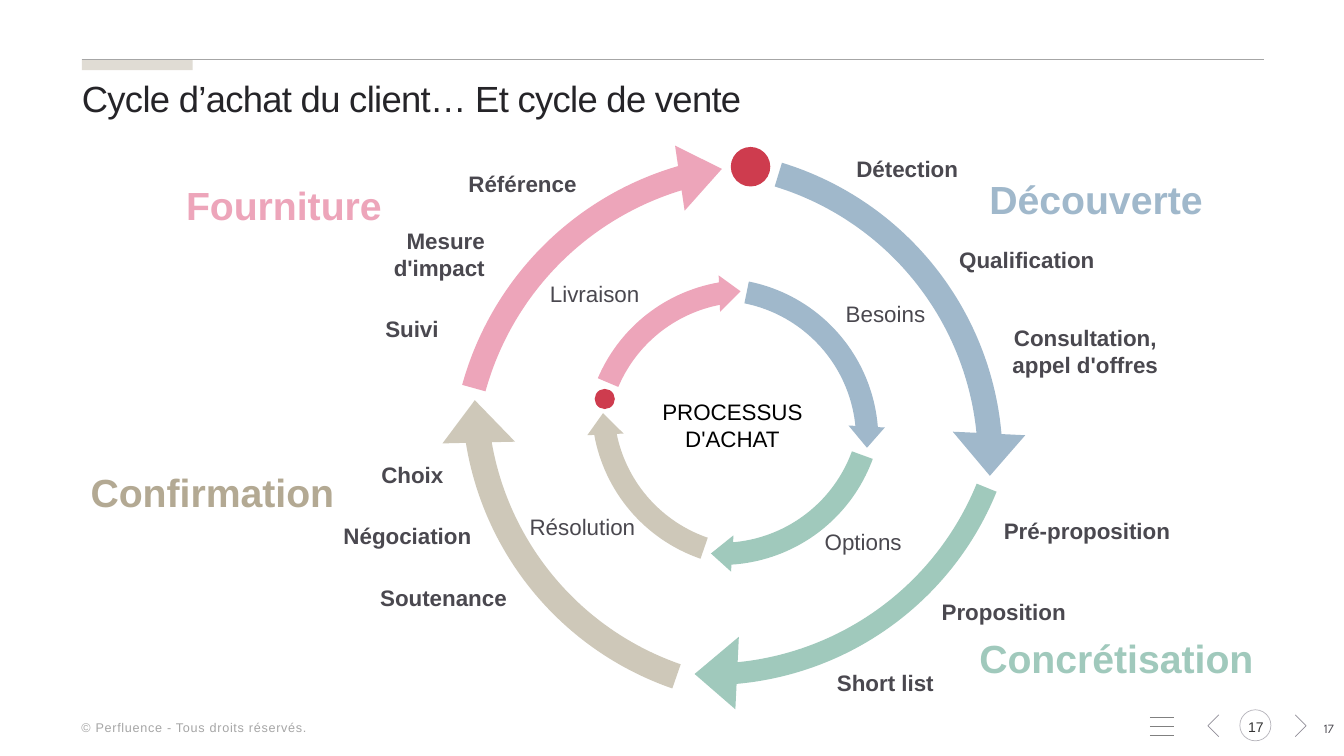
from lxml.etree import SubElement
from pptx import Presentation
from pptx.dml.color import RGBColor
from pptx.enum.shapes import MSO_CONNECTOR as Link, MSO_SHAPE as Shape
from pptx.enum.text import MSO_ANCHOR as Anchor, PP_ALIGN as Align
from pptx.oxml.ns import qn
from pptx.util import Inches, Pt

COLUMNS, ROWS = 160, 90
BLUE = RGBColor(0xA0, 0xB8, 0xCB)
GREEN = RGBColor(0xA0, 0xC9, 0xBC)
SAND = RGBColor(0xCE, 0xC8, 0xB9)
DARK_SAND = RGBColor(0xB3, 0xA9, 0x93)
PINK = RGBColor(0xED, 0xA5, 0xBA)
RED = RGBColor(0xCE, 0x3C, 0x4E)
TAB = RGBColor(0xE0, 0xDC, 0xD4)
INK = RGBColor(0x25, 0x24, 0x28)
BODY = RGBColor(0x4A, 0x48, 0x4F)
BLACK = RGBColor(0, 0, 0)
NUMBER = RGBColor(0x33, 0x33, 0x33)
RULE = RGBColor(0xA6, 0xA6, 0xA6)
MENU = RGBColor(0x80, 0x80, 0x80)
CHEVRON = RGBColor(0x91, 0x8E, 0x98)
RING = RGBColor(0xB6, 0xB4, 0xBB)

STEPS = [
    ("Détection", 100.7, 17.9, 14.6),
    ("Qualification", 112.9, 28.7, 18.7),
    ("Pré-proposition", 118.2, 61, 22.4),
    ("Proposition", 110.8, 70.6, 17.4),
    ("Short list", 98.4, 79.1, 14),
    ("Soutenance", 44, 69, 17.6),
    ("Négociation", 39.6, 61.6, 17.8),
    ("Choix", 44.2, 54.3, 9.8),
    ("Suivi", 44.6, 36.9, 8.9),
    ("Référence", 54.5, 19.7, 15.4),
]
BUYING_STAGES = [
    ("Besoins", 99.5, 35.1, 17.5, Align.LEFT),
    ("Options", 97, 62.3, 17.2, Align.LEFT),
    ("Résolution", 54.6, 60.5, 22.2, Align.RIGHT),
    ("Livraison", 58, 32.8, 19.3, Align.RIGHT),
]
PHASES = [
    ("Découverte", 116.6, 20.3, 28.1, BLUE, Align.LEFT),
    ("Concrétisation", 115.4, 74.9, 35.4, GREEN, Align.LEFT),
    ("Confirmation", 9.6, 55.1, 33.8, DARK_SAND, Align.LEFT),
    ("Fourniture", 16.8, 21, 34, PINK, Align.CENTER),
]
INNER_CYCLE = [
    (65.3, 32.3, 55.7, BLUE, 66, 8.11, 299.27, 225.69, 54),
    (65.8, 28, 146.5, GREEN, 66, 8.14, 299.27, 233.54, 54),
    (69.6, 28.3, 229.9, SAND, 66, 8.14, 299.27, 239.1, 54),
    (68.8, 32.5, 320.4, PINK, 66, 8.14, 299.27, 242.66, 54),
]
OUTER_CYCLE = [
    (42.2, 14.9, 55.7, BLUE, 37, 8.11, 299, 231.34, 54),
    (44.4, 4.6, 146.5, GREEN, 32, 8.14, 298.12, 235.66, 54),
    (52.2, 6.8, 231.7, SAND, 38, 8.14, 298.81, 237.37, 54),
    (51.2, 15.8, 315.2, PINK, 36, 8.14, 298.28, 240.23, 49),
]


def write(frame, text, size=16, color=BODY, bold=False, align=Align.LEFT,
          font="Arial", tracking=0, leading=None):
    for index, line in enumerate(text.split("\n")):
        paragraph = frame.add_paragraph() if index else frame.paragraphs[0]
        paragraph.alignment = align
        paragraph.line_spacing = leading
        run = paragraph.add_run()
        run.text = line
        run.font.name, run.font.size = font, Pt(size)
        run.font.bold, run.font.color.rgb = bold, color
        if tracking:
            run.font._element.set("spc", str(int(tracking * 100)))


class Board:
    def __init__(self, deck):
        self.shapes = deck.slides.add_slide(deck.slide_layouts[6]).shapes
        self.column = deck.slide_width / COLUMNS
        self.row = deck.slide_height / ROWS
        self.hairline = Pt(0.5)

    def place(self, x, y):
        return round(x * self.column), round(y * self.row)

    def text(self, text, left, top, width, height=4.4, wrap=True,
             anchor=Anchor.TOP, margin=True, **style):
        box = self.shapes.add_textbox(*self.place(left, top), *self.place(width, height))
        frame = box.text_frame
        frame.word_wrap, frame.vertical_anchor = wrap, anchor
        if not margin:
            frame.margin_left = frame.margin_right = 0
            frame.margin_top = frame.margin_bottom = 0
        write(frame, text, **style)

    def shape(self, kind, left, top, width, height, fill=None, line=None):
        figure = self.shapes.add_shape(kind, *self.place(left, top), *self.place(width, height))
        self.paint(figure, fill, line)
        return figure

    def paint(self, figure, fill, line):
        figure.shadow.inherit = False
        if fill is None:
            figure.fill.background()
        else:
            figure.fill.solid()
            figure.fill.fore_color.rgb = fill
        if line is None:
            figure.line.fill.background()
        else:
            figure.line.color.rgb = line
            figure.line.width = self.hairline

    def arc(self, extent, left, top, turn, fill, band, tip, end, start, head):
        arrow = self.shape(Shape.CIRCULAR_ARROW, left, top, extent, extent, fill)
        arrow.rotation = turn
        settings = (band / 1000, tip * 0.6, end * 0.6, start * 0.6, head / 1000)
        for index, value in enumerate(settings):
            arrow.adjustments[index] = value

    def rule(self, left, right, y, color):
        line = self.shapes.add_connector(
            Link.STRAIGHT, *self.place(left, y), *self.place(right, y))
        line.line.color.rgb, line.line.width = color, self.hairline
        SubElement(line._element.spPr, qn("a:effectLst"))

    def chevron(self, back, tip):
        outline = self.shapes.build_freeform(*self.place(back, 85.1))
        outline.add_line_segments(
            [self.place(tip, 86.4), self.place(back, 87.7)], close=False)
        self.paint(outline.convert_to_shape(), None, CHEVRON)


def draw_frame(board):
    board.chevron(145.1, 143.8)
    board.chevron(154.2, 155.5)
    board.shape(Shape.OVAL, 147.6, 84.5, 3.7, 3.7, line=RING)
    board.text("17", 147.4, 84.6, 4.2, 3.8, anchor=Anchor.MIDDLE, margin=False,
               size=10, color=NUMBER, align=Align.CENTER)
    board.shape(Shape.RECTANGLE, 9.75, 7.05, 13.2, 1.3, TAB)
    board.rule(9.75, 150.5, 7.03, RULE)
    for bar in range(3):
        board.rule(136.9, 139.8, 85.4 + bar * 1.05, MENU)
    board.text("Cycle d’achat du client… Et cycle de vente", 9.75, 9.7, 140.8, 8.8,
               margin=False, size=26, color=INK, tracking=-0.5, leading=0.9)
    board.text("17", 129.7, 85.2, 30.3, 3, size=9, font="League Spartan", align=Align.RIGHT)
    board.text("© Perfluence - Tous droits réservés.", 8.5, 85.1, 73, 3,
               size=9, color=RULE, tracking=0.5)


def draw_cycles(board):
    board.shape(Shape.OVAL, 70.8, 46.3, 2.4, 2.4, RED)
    board.shape(Shape.OVAL, 87, 17.5, 4.7, 4.7, RED)
    for extent, cycle in ((40.1, INNER_CYCLE), (80, OUTER_CYCLE)):
        for arrow in cycle:
            board.arc(extent, *arrow)


def draw_labels(board):
    board.text("PROCESSUS\nD'ACHAT", 76.1, 46.8, 22.2, 7.7, color=BLACK, align=Align.CENTER)
    for stage, left, top, width, align in BUYING_STAGES:
        board.text(stage, left, top, width, align=align)
    for step, left, top, width in STEPS:
        board.text(step, left, top, width, wrap=False, bold=True, align=Align.CENTER)
    board.text("Mesure\nd'impact", 45.6, 26.5, 13.3, 7.7, wrap=False, bold=True,
               align=Align.RIGHT)
    board.text("Consultation, appel d'offres", 117.2, 38, 24, 7.7, bold=True,
               align=Align.CENTER)
    for phase, left, top, width, color, align in PHASES:
        board.text(phase, left, top, width, 6.8, wrap=False, size=28, color=color,
                   bold=True, align=align)


def main():
    deck = Presentation()
    deck.slide_width, deck.slide_height = Inches(13.33), Inches(7.5)
    board = Board(deck)
    draw_frame(board)
    draw_cycles(board)
    draw_labels(board)
    deck.save("out.pptx")


if __name__ == "__main__":
    main()
